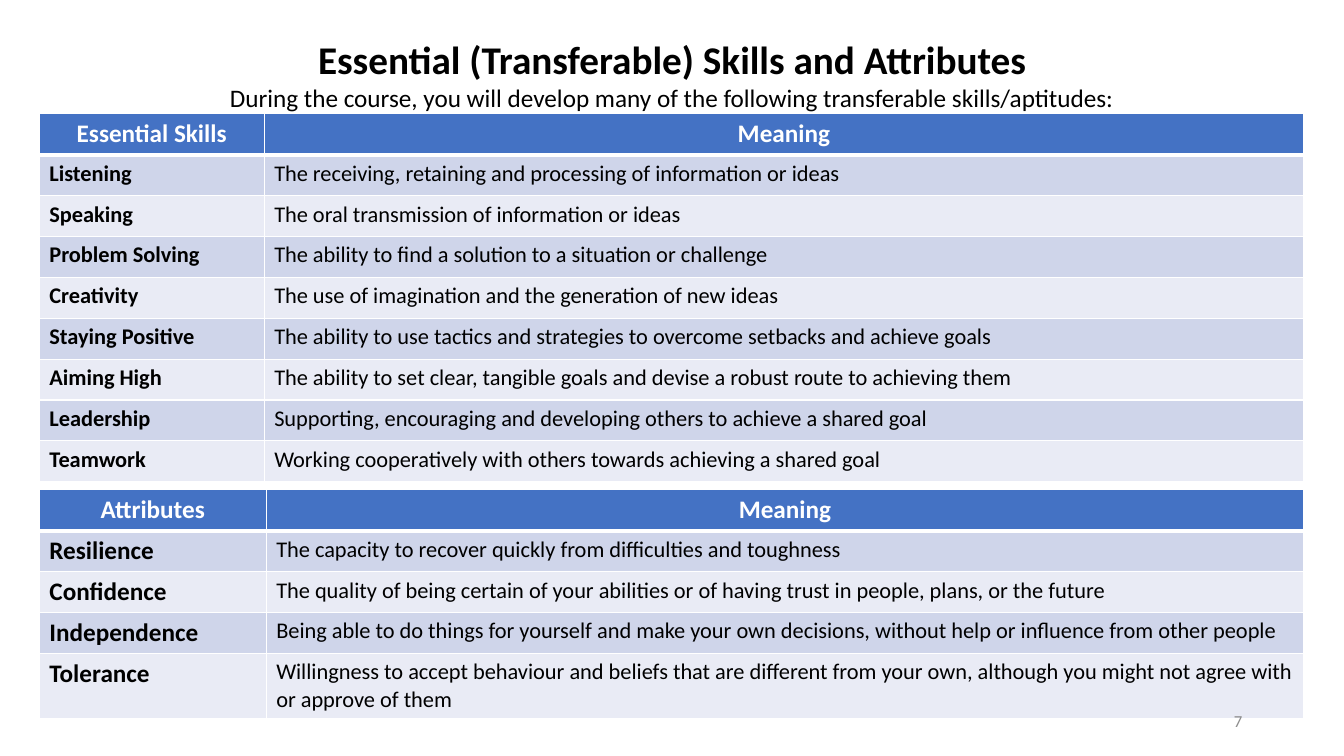
from dataclasses import dataclass

from lxml.etree import SubElement
from pptx import Presentation
from pptx.dml.color import RGBColor
from pptx.enum.text import MSO_ANCHOR, MSO_AUTO_SIZE, PP_ALIGN
from pptx.oxml.ns import qn
from pptx.util import Inches, Pt


@dataclass(frozen=True)
class Theme:
    font: str = "Calibri"
    ink: str = "000000"
    white: str = "FFFFFF"
    header: str = "4472C4"
    bands: tuple = ("CFD5EA", "E9EBF5")
    muted: str = "8C8C8C"
    title: int = 28
    lead: int = 18
    body: int = 16
    small: int = 12
    rule: int = 1
    header_rule: int = 3


THEME = Theme()
WIDTH, HEIGHT = 13.33, 7.5
TABLE_LEFT, TABLE_WIDTH = 0.39, 12.54
ROW = 3.65 / 9

SKILLS = [
    ("Essential Skills", "Meaning"),
    ("Listening", "The receiving, retaining and processing of information or ideas"),
    ("Speaking", "The oral transmission of information or ideas"),
    ("Problem Solving", "The ability to find a solution to a situation or challenge"),
    ("Creativity", "The use of imagination and the generation of new ideas"),
    ("Staying Positive", "The ability to use tactics and strategies to overcome setbacks and achieve goals"),
    ("Aiming High", "The ability to set clear, tangible goals and devise a robust route to achieving them"),
    ("Leadership", "Supporting, encouraging and developing others to achieve a shared goal"),
    ("Teamwork", "Working cooperatively with others towards achieving a shared goal"),
]
ATTRIBUTES = [
    ("Attributes", "Meaning"),
    ("Resilience", "The capacity to recover quickly from difficulties and toughness"),
    ("Confidence", "The quality of being certain of your abilities or of having trust in people, plans, or the future"),
    ("Independence", "Being able to do things for yourself and make your own decisions, "
                     "without help or influence from other people"),
    ("Tolerance", "Willingness to accept behaviour and beliefs that are different from your own, "
                  "although you might not agree with or approve of them"),
]


def write_text(paragraph, text, size=THEME.body, color=THEME.ink, bold=False, align=PP_ALIGN.LEFT):
    paragraph.alignment = align
    run = paragraph.add_run()
    run.text = text
    run.font.name = THEME.font
    run.font.size = Pt(size)
    run.font.bold = bold
    run.font.color.rgb = RGBColor.from_string(color)


def add_borders(cell, top, bottom):
    properties = cell._tc.get_or_add_tcPr()
    sides = {"a:lnL": THEME.rule, "a:lnR": THEME.rule, "a:lnT": top, "a:lnB": bottom}
    for side, points in sides.items():
        line = SubElement(properties, qn(side), w=str(Pt(points)))
        fill = SubElement(line, qn("a:solidFill"))
        SubElement(fill, qn("a:srgbClr"), val=THEME.white)


def add_heading(slide, box, title, lead):
    heading = slide.shapes.title
    heading.left, heading.top, heading.width, heading.height = map(Inches, box)
    frame = heading.text_frame
    frame.word_wrap = True
    frame.auto_size = MSO_AUTO_SIZE.NONE
    frame.vertical_anchor = MSO_ANCHOR.TOP
    write_text(frame.paragraphs[0], title, size=THEME.title, bold=True, align=PP_ALIGN.CENTER)
    write_text(frame.add_paragraph(), lead, size=THEME.lead, align=PP_ALIGN.CENTER)


def add_meanings(slide, box, entries, term_width, term_size):
    left, top, width, height = box
    table = slide.shapes.add_table(len(entries), 2, *map(Inches, box)).table
    table.columns[0].width = Inches(term_width)
    table.columns[1].width = Inches(width - term_width)
    last = len(entries) - 1
    for index, entry in enumerate(entries):
        table.rows[index].height = Inches(ROW if index < last else height - ROW * last)
        is_header = index == 0
        for column, text in enumerate(entry):
            cell = table.cell(index, column)
            add_borders(
                cell,
                top=THEME.header_rule if index == 1 else THEME.rule,
                bottom=THEME.header_rule if is_header else THEME.rule,
            )
            cell.fill.solid()
            band = THEME.header if is_header else THEME.bands[(index - 1) % 2]
            cell.fill.fore_color.rgb = RGBColor.from_string(band)
            paragraph = cell.text_frame.paragraphs[0]
            if is_header:
                write_text(paragraph, text, size=THEME.lead, color=THEME.white, bold=True, align=PP_ALIGN.CENTER)
            elif column == 0:
                write_text(paragraph, text, size=term_size, bold=True)
            else:
                write_text(paragraph, text)


def add_page_number(slide, box, number):
    frame = slide.shapes.add_textbox(*map(Inches, box)).text_frame
    frame.word_wrap = True
    frame.vertical_anchor = MSO_ANCHOR.MIDDLE
    write_text(frame.paragraphs[0], number, size=THEME.small, color=THEME.muted, align=PP_ALIGN.RIGHT)


def main():
    deck = Presentation()
    deck.slide_width, deck.slide_height = Inches(WIDTH), Inches(HEIGHT)
    slide = deck.slides.add_slide(deck.slide_layouts.get_by_name("Title Only"))
    add_heading(
        slide,
        (0.81, 0.3, 11.71, 0.88),
        "Essential (Transferable) Skills and Attributes",
        "During the course, you will develop many of the following transferable skills/aptitudes:",
    )
    add_meanings(slide, (TABLE_LEFT, 1.13, TABLE_WIDTH, 3.65), SKILLS, term_width=2.23, term_size=THEME.body)
    add_meanings(slide, (TABLE_LEFT, 4.86, TABLE_WIDTH, 2.26), ATTRIBUTES, term_width=2.25, term_size=THEME.lead)
    add_page_number(slide, (9.42, 6.95, 3, 0.4), "7")
    deck.save("out.pptx")


if __name__ == "__main__":
    main()
